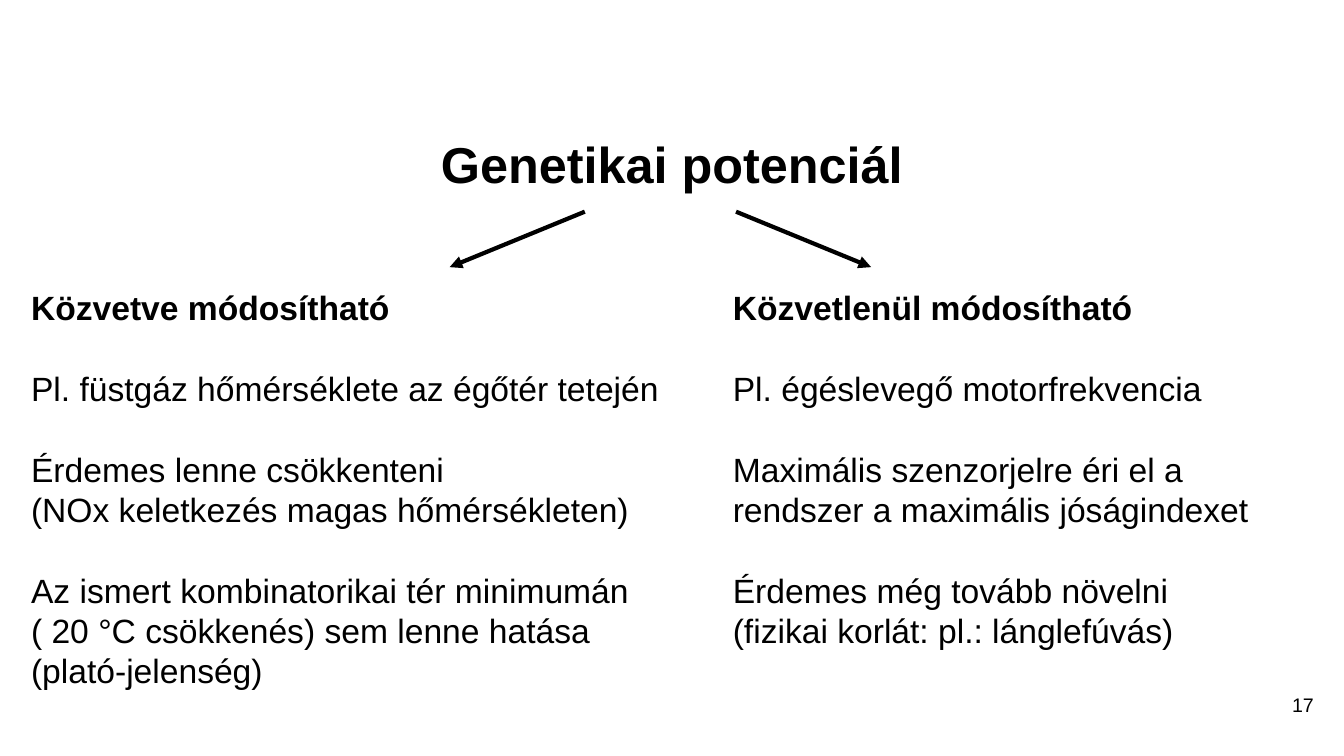
from lxml import etree
from pptx import Presentation
from pptx.dml.color import RGBColor
from pptx.enum.shapes import MSO_CONNECTOR as Link
from pptx.enum.text import MSO_ANCHOR as Anchor, PP_ALIGN as Align
from pptx.oxml.ns import qn
from pptx.util import Inches, Pt

BLACK = RGBColor(0, 0, 0)
PITCH = Pt(28.8)

deck = Presentation()
deck.slide_width, deck.slide_height = Inches(13.33), Inches(7.5)
slide = deck.slides.add_slide(deck.slide_layouts[6])


def add_box(left, top, width, height):
    box = slide.shapes.add_textbox(
        Inches(left), Inches(top), Inches(width), Inches(height))
    box.text_frame.word_wrap = True
    return box.text_frame


def set_text(para, text, size, bold=False, align=Align.LEFT):
    para.text = text
    para.alignment = align
    font = para.font
    font.name, font.size, font.bold = "Arial", Pt(size), bold
    font.color.rgb = BLACK


title = add_box(0, 1.15, 13.33, 0.94)
title.vertical_anchor = Anchor.MIDDLE
set_text(title.paragraphs[0], "Genetikai potenciál", 36, True, Align.CENTER)

number = add_box(10.02, 6.82, 3.11, 0.52)
set_text(number.paragraphs[0], "17", 14, align=Align.RIGHT)

# Arrows from the title to the two columns
for start, end in ((7.3, 8.64), (5.8, 4.46)):
    arrow = slide.shapes.add_connector(
        Link.STRAIGHT, Inches(start), Inches(2.1), Inches(end), Inches(2.65))
    arrow.line.color.rgb = BLACK
    arrow.line.width = Pt(3)
    tail = etree.SubElement(arrow.line._get_or_add_ln(), qn("a:tailEnd"))
    tail.set("type", "triangle")
    etree.SubElement(arrow._element.spPr, qn("a:effectLst"))

# Each column: left, width, height, then blocks set one line apart
columns = (
    (7.17, 5.7, 3.74, (
        "Közvetlenül módosítható",
        "Pl. égéslevegő motorfrekvencia",
        "Maximális szenzorjelre éri el a rendszer a maximális jóságindexet",
        "Érdemes még tovább növelni\v(fizikai korlát: pl.: lánglefúvás)",
    )),
    (0.21, 6.57, 4.14, (
        "Közvetve módosítható",
        "Pl. füstgáz hőmérséklete az égőtér tetején",
        "Érdemes lenne csökkenteni\v(NOx keletkezés magas hőmérsékleten)",
        "Az ismert kombinatorikai tér minimumán\v"
        "( 20 °C csökkenés) sem lenne hatása\v(plató-jelenség)",
    )),
)
for left, width, height, blocks in columns:
    frame = add_box(left, 2.8, width, height)
    for i, block in enumerate(blocks):
        para = frame.add_paragraph() if i else frame.paragraphs[0]
        set_text(para, block, 24, bold=i == 0)
        para.line_spacing = PITCH
        if i:
            para.space_before = PITCH

deck.save("out.pptx")
